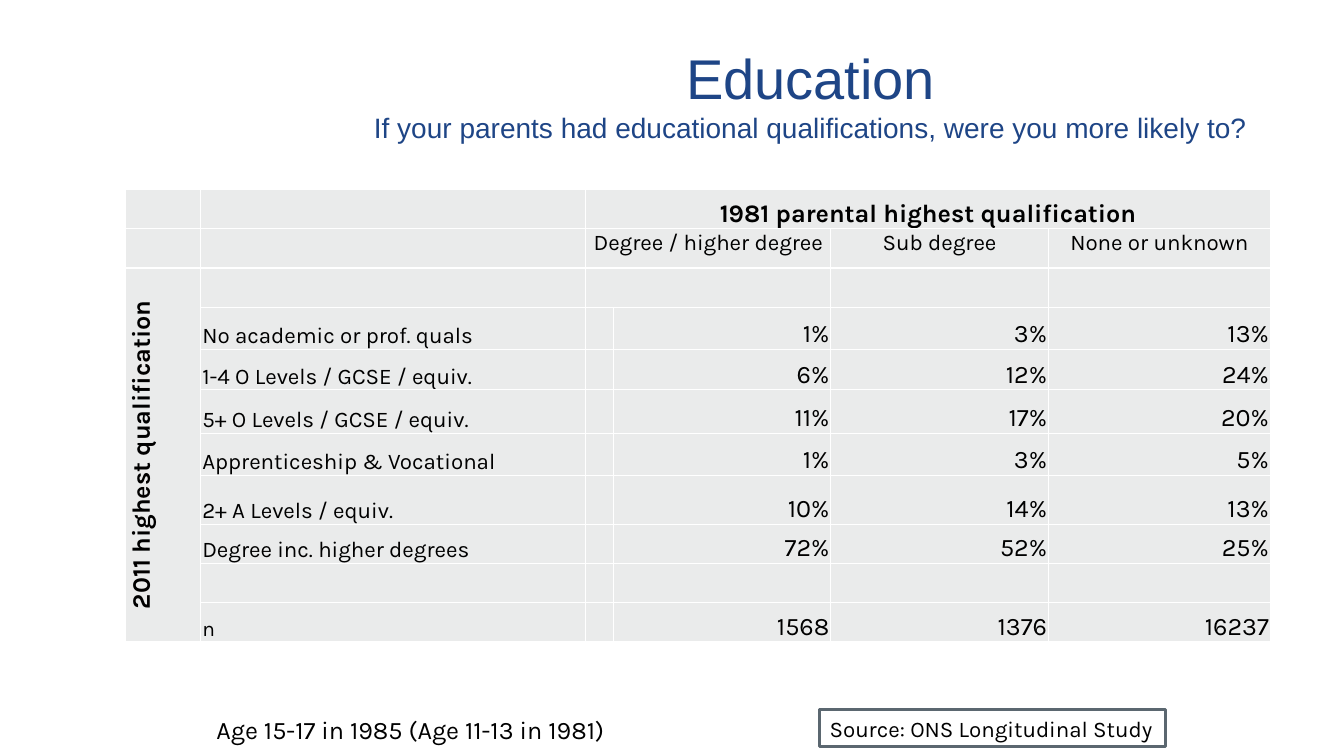
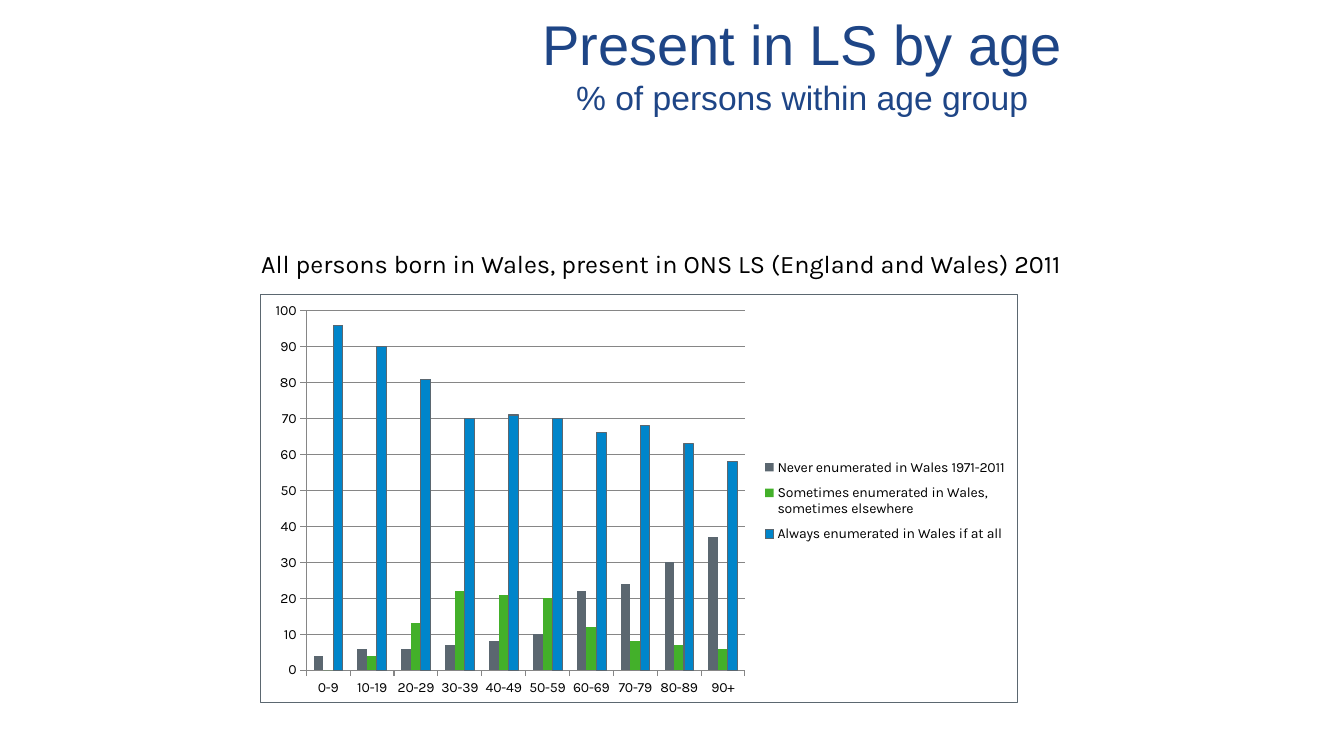
from lxml import etree
from pptx import Presentation
from pptx.chart.data import CategoryChartData
from pptx.dml.color import RGBColor
from pptx.enum import chart as ch, shapes, text
from pptx.oxml.ns import nsdecls, qn
from pptx.util import Pt

ALIGN = text.PP_ALIGN
ANCHOR = text.MSO_ANCHOR


def rgb(value):
    return RGBColor.from_string(value)


def set_attrs(target, values):
    for name, value in values.items():
        setattr(target, name, value)


class Deck:
    NAVY, BLACK, WHITE = "1E4586", "000000", "FFFFFF"
    SLATE, GREEN, BLUE = "5B6770", "43B02A", "0085CA"
    CELL, GRID = "EAEBEB", "868686"
    HEAD_FONT, BODY_FONT = "Arial", "Karla"

    def __init__(self):
        self.prs = Presentation()
        set_attrs(self.prs, {"slide_width": Pt(960), "slide_height": Pt(540)})
        self.s = None

    def new_slide(self):
        self.s = self.prs.slides.add_slide(self.prs.slide_layouts[6])

    def add_text(self, p, words, size, align=ALIGN.LEFT, font=BODY_FONT,
                 color=BLACK, bold=False):
        p.alignment = align
        r = p.add_run()
        r.text = words
        set_attrs(r.font, {"name": font, "size": Pt(size), "bold": bold})
        r.font.color.rgb = rgb(color)

    def title(self, box, lines):
        """Centred heading; lines holds (words, size) pairs."""
        sp = self.s.shapes.add_textbox(*map(Pt, box))
        tf = sp.text_frame
        set_attrs(tf, {"word_wrap": True, "vertical_anchor": ANCHOR.MIDDLE})
        for i, (words, size) in enumerate(lines):
            p = tf.add_paragraph() if i else tf.paragraphs[0]
            self.add_text(p, words, size, ALIGN.CENTER, self.HEAD_FONT,
                          self.NAVY)

    def label(self, box, words, size=18):
        sp = self.s.shapes.add_textbox(*map(Pt, box))
        sp.text_frame.word_wrap = True
        self.add_text(sp.text_frame.paragraphs[0], words, size)

    def framed_label(self, box, words, size=16):
        sp = self.s.shapes.add_shape(shapes.MSO_SHAPE.RECTANGLE, *map(Pt, box))
        sp.shadow.inherit = False
        sp.fill.solid()
        sp.fill.fore_color.rgb = rgb(self.WHITE)
        sp.line.color.rgb = rgb(self.SLATE)
        sp.line.width = Pt(2)
        tf = sp.text_frame
        set_attrs(tf, {"word_wrap": False, "vertical_anchor": ANCHOR.MIDDLE})
        self.add_text(tf.paragraphs[0], words, size)

    def table(self, left, top, widths, heights):
        frame = self.s.shapes.add_table(
            len(heights), len(widths), Pt(left), Pt(top),
            Pt(sum(widths)), Pt(sum(heights)))
        tbl = frame.table
        set_attrs(tbl, {"first_row": False, "horz_banding": False})
        for col, width in zip(tbl.columns, widths):
            col.width = Pt(width)
        for row, height in zip(tbl.rows, heights):
            row.height = Pt(height)
        margins = {"margin_left": Pt(1), "margin_right": Pt(1),
                   "margin_top": Pt(1), "margin_bottom": Pt(0)}
        for cell in tbl.iter_cells():
            set_attrs(cell, margins)
            tc_pr = cell._tc.get_or_add_tcPr()
            # Borders come before the fill
            for side in ("lnL", "lnR", "lnT", "lnB"):
                tc_pr.append(self.line_xml(f"a:{side}", self.WHITE, 1))
            cell.fill.solid()
            cell.fill.fore_color.rgb = rgb(self.CELL)
        return tbl

    def cell(self, cell, words, size, align=ALIGN.LEFT, bold=False,
             anchor=ANCHOR.BOTTOM):
        cell.vertical_anchor = anchor
        self.add_text(cell.text_frame.paragraphs[0], words, size, align,
                      bold=bold)

    @staticmethod
    def line_xml(tag, color, width):
        return etree.fromstring(
            f'<{tag} {nsdecls("a")} w="{Pt(width)}"><a:solidFill>'
            f'<a:srgbClr val="{color}"/></a:solidFill></{tag}>')

    @staticmethod
    def layout_xml(x, y, w, h, inner=False):
        target = '<c:layoutTarget val="inner"/>' if inner else ""
        sizes = "".join(f'<c:{k} val="{v}"/>'
                        for k, v in zip("xywh", (x, y, w, h)))
        return etree.fromstring(
            f'<c:layout {nsdecls("c")}><c:manualLayout>{target}'
            f'<c:xMode val="edge"/><c:yMode val="edge"/>{sizes}'
            '</c:manualLayout></c:layout>')

    def column_chart(self, box, cats, series):
        """series holds (name, values, colour, outlined) rows."""
        data = CategoryChartData(number_format="0")
        data.categories = cats
        for name, values, *_ in series:
            data.add_series(name, values)
        chart = self.s.shapes.add_chart(
            ch.XL_CHART_TYPE.COLUMN_CLUSTERED, *map(Pt, box), data).chart
        set_attrs(chart, {"has_title": False, "has_legend": True})
        set_attrs(chart.font, {"name": self.BODY_FONT, "size": Pt(10)})
        chart.font.color.rgb = rgb(self.BLACK)

        # Columns
        plot = chart.plots[0]
        set_attrs(plot, {"gap_width": 150, "overlap": 0,
                         "vary_by_categories": False})
        for ser, (_, _, color, outlined) in zip(plot.series, series):
            ser.format.fill.solid()
            ser.format.fill.fore_color.rgb = rgb(color)
            if outlined:
                ser.format.line.color.rgb = rgb(self.SLATE)
                ser.format.line.width = Pt(0.75)

        # Axes
        val = chart.value_axis
        set_attrs(val, {"minimum_scale": 0, "maximum_scale": 100,
                        "major_unit": 10, "has_major_gridlines": True})
        set_attrs(val.tick_labels, {"number_format": "0",
                                    "number_format_is_linked": False})
        for axis in (val, chart.category_axis):
            axis.major_tick_mark = ch.XL_TICK_MARK.OUTSIDE
        for part in (val, chart.category_axis, val.major_gridlines):
            part.format.line.color.rgb = rgb(self.GRID)
            part.format.line.width = Pt(0.75)

        # Legend, plot placement and outer border
        set_attrs(chart.legend, {"position": ch.XL_LEGEND_POSITION.RIGHT,
                                 "include_in_layout": False})
        root = chart.element
        area = root.find(".//" + qn("c:plotArea"))
        legend = root.find(".//" + qn("c:legend"))
        for part in (area, legend):
            for old in part.findall(qn("c:layout")):
                part.remove(old)
        area.insert(0, self.layout_xml(0.06, 0.04, 0.58, 0.88, inner=True))
        legend.find(qn("c:legendPos")).addnext(
            self.layout_xml(0.66, 0.38, 0.33, 0.25))
        sp_pr = etree.fromstring(f'<c:spPr {nsdecls("c")}/>')
        sp_pr.append(self.line_xml("a:ln", self.SLATE, 0.75))
        root.find(qn("c:chart")).addnext(sp_pr)


def education(deck):
    deck.new_slide()
    deck.title((234, 22, 690, 90), [
        ("Education", 40),
        ("If your parents had educational qualifications, "
         "were you more likely to?", 20)])
    deck.framed_label((585.5, 507, 247, 26.5), "Source: ONS Longitudinal Study")

    tbl = deck.table(89.5, 135.5, [54, 275, 19.5, 155.5, 155.5, 158.5],
                     [28, 28, 28, 30, 29, 31, 30, 35, 28, 28, 28])
    for first, last in [((0, 2), (0, 5)), ((1, 2), (1, 3)),
                        ((2, 2), (2, 3)), ((2, 0), (10, 0))]:
        tbl.cell(*first).merge(tbl.cell(*last))

    # Headings
    deck.cell(tbl.cell(0, 2), "1981 parental highest qualification", 18,
              ALIGN.CENTER, bold=True)
    for col, words in [(2, "Degree / higher degree"), (4, "Sub degree"),
                       (5, "None or unknown")]:
        deck.cell(tbl.cell(1, col), words, 16, ALIGN.CENTER, anchor=ANCHOR.TOP)
    side = tbl.cell(2, 0)
    deck.cell(side, "2011 highest qualification", 18, ALIGN.CENTER, bold=True)
    side._tc.get_or_add_tcPr().set("vert", "vert270")

    # Body, keyed by table row
    body = {
        3: ("No academic or prof. quals", "1%", "3%", "13%"),
        4: ("1-4 O Levels / GCSE / equiv.", "6%", "12%", "24%"),
        5: ("5+ O Levels / GCSE / equiv.", "11%", "17%", "20%"),
        6: ("Apprenticeship & Vocational", "1%", "3%", "5%"),
        7: ("2+ A Levels / equiv.", "10%", "14%", "13%"),
        8: ("Degree inc. higher degrees", "72%", "52%", "25%"),
        10: ("n", "1568", "1376", "16237"),
    }
    for row, (name, *values) in body.items():
        deck.cell(tbl.cell(row, 1), name, 15 if name == "n" else 16)
        for col, value in enumerate(values, 3):
            deck.cell(tbl.cell(row, col), value, 18, ALIGN.RIGHT)

    deck.label((147.5, 507, 378, 29), "Age 15-17 in 1985 (Age 11-13 in 1981)")


def present_by_age(deck):
    deck.new_slide()
    deck.title((234, 0, 678, 90), [("Present in LS by age", 40),
                                   ("% of persons within age group", 24)])
    deck.label((179.5, 173.5, 620, 29),
               "All persons born in Wales, present in ONS LS "
               "(England and Wales) 2011")
    ages = [f"{a}-{a + 9}" for a in range(0, 90, 10)] + ["90+"]
    deck.column_chart((186, 210, 541, 292.5), ages, [
        ("Never enumerated in Wales 1971-2011",
         (4, 6, 6, 7, 8, 10, 22, 24, 30, 37), deck.SLATE, False),
        ("Sometimes enumerated in Wales, sometimes elsewhere",
         (0, 4, 13, 22, 21, 20, 12, 8, 7, 6), deck.GREEN, False),
        ("Always enumerated in Wales if at all",
         (96, 90, 81, 70, 71, 70, 66, 68, 63, 58), deck.BLUE, True)])


def main():
    deck = Deck()
    education(deck)
    present_by_age(deck)
    deck.prs.save("out.pptx")


if __name__ == "__main__":
    main()
